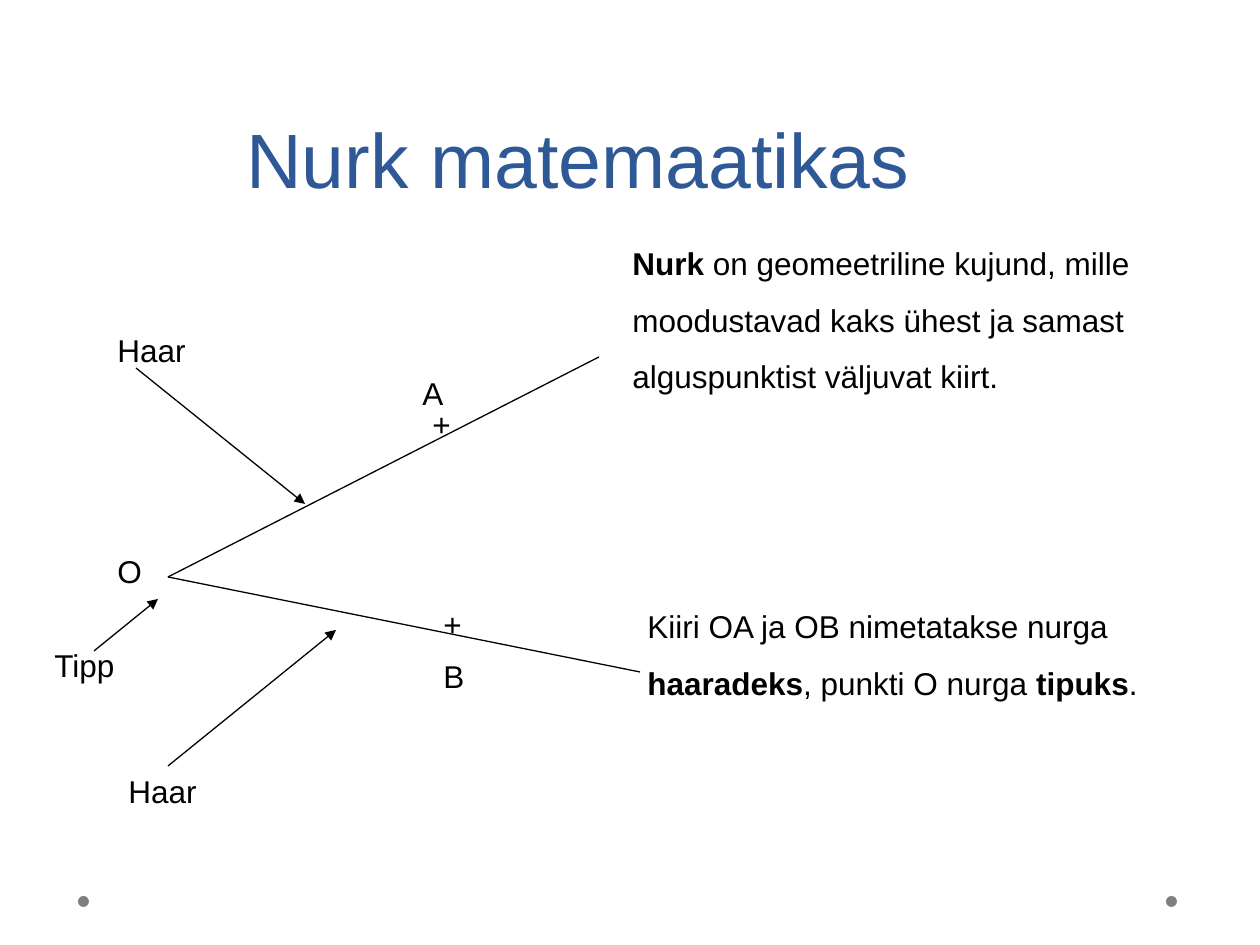
import pptx
import pptx.dml.color
import pptx.enum.shapes
import pptx.oxml.ns
import pptx.util
from lxml import etree

PX = 914400 // 126
BLACK, BLUE, GREY = "000000", "2F5897", "7F7F7F"

DOTS = [(78, 896), (1166, 896)]
DOT_SIZE = 11

VERTEX = (168, 577)
RAY_ENDS = [(599, 357), (640, 672)]
POINTERS = [
    ((136, 368), (305, 504)),
    ((168, 766), (336, 630)),
    ((94, 651), (158, 599)),
]

# text, left, top, width
LABELS = [
    ("+", 420, 399, 53),
    ("+", 431, 599, 53),
    ("O", 105, 546, 53),
    ("A", 410, 368, 42),
    ("B", 431, 651, 42),
    ("Haar", 105, 325, 231),
    ("Haar", 116, 766, 210),
    ("Tipp", 42, 640, 136),
]
LABEL_HEIGHT = 63

TITLE = ("Nurk matemaatikas", 234, 105, 714, 105)

# runs as (text, bold), left, top, width, height
DEFINITIONS = [
    ([("Nurk", True),
      (" on geomeetriline kujund, mille moodustavad kaks ühest ja samast "
       "alguspunktist väljuvat kiirt.", False)], 620, 219, 609, 318),
    ([("Kiiri OA ja OB nimetatakse nurga ", False), ("haaradeks", True),
      (", punkti O nurga ", False), ("tipuks", True), (".", False)],
     635, 582, 609, 242),
]


def px(*values):
    return [pptx.util.Emu(v * PX) for v in values]


def rgb(color):
    return pptx.dml.color.RGBColor.from_string(color)


def add_text(slide, text, box, size=18, color=BLACK, spacing=None):
    """Add a text box; text is a string or a list of (text, bold) runs."""
    tf = slide.shapes.add_textbox(*px(*box)).text_frame
    tf.word_wrap = True
    p = tf.paragraphs[0]
    p.line_spacing = spacing
    runs = [(text, False)] if isinstance(text, str) else text
    for words, bold in runs:
        r = p.add_run()
        r.text = words
        r.font.name = "Arial"
        r.font.size = pptx.util.Pt(size)
        r.font.bold = bold
        r.font.color.rgb = rgb(color)


def add_line(slide, start, end, arrow=False):
    line = slide.shapes.add_connector(
        pptx.enum.shapes.MSO_CONNECTOR.STRAIGHT, *px(*start, *end))
    line.line.color.rgb = rgb(BLACK)
    line.line.width = pptx.util.Pt(0.75)
    qn = pptx.oxml.ns.qn
    if arrow:
        etree.SubElement(line.line._get_or_add_ln(), qn("a:tailEnd"), type="triangle")
    etree.SubElement(line._element.spPr, qn("a:effectLst"))


def add_dot(slide, left, top):
    dot = slide.shapes.add_shape(
        pptx.enum.shapes.MSO_SHAPE.OVAL, *px(left, top, DOT_SIZE, DOT_SIZE))
    dot.shadow.inherit = False
    dot.fill.solid()
    dot.fill.fore_color.rgb = rgb(GREY)
    dot.line.fill.background()


def main():
    prs = pptx.Presentation()
    prs.slide_width, prs.slide_height = px(1260, 945)
    slide = prs.slides.add_slide(prs.slide_layouts[6])

    for left, top in DOTS:
        add_dot(slide, left, top)
    for end in RAY_ENDS:
        add_line(slide, VERTEX, end)
    for start, end in POINTERS:
        add_line(slide, start, end, arrow=True)
    for text, left, top, width in LABELS:
        add_text(slide, text, (left, top, width, LABEL_HEIGHT))
    title, *box = TITLE
    add_text(slide, title, box, size=44, color=BLUE)
    for runs, *box in DEFINITIONS:
        add_text(slide, runs, box, spacing=1.5)

    prs.save("out.pptx")


if __name__ == "__main__":
    main()
